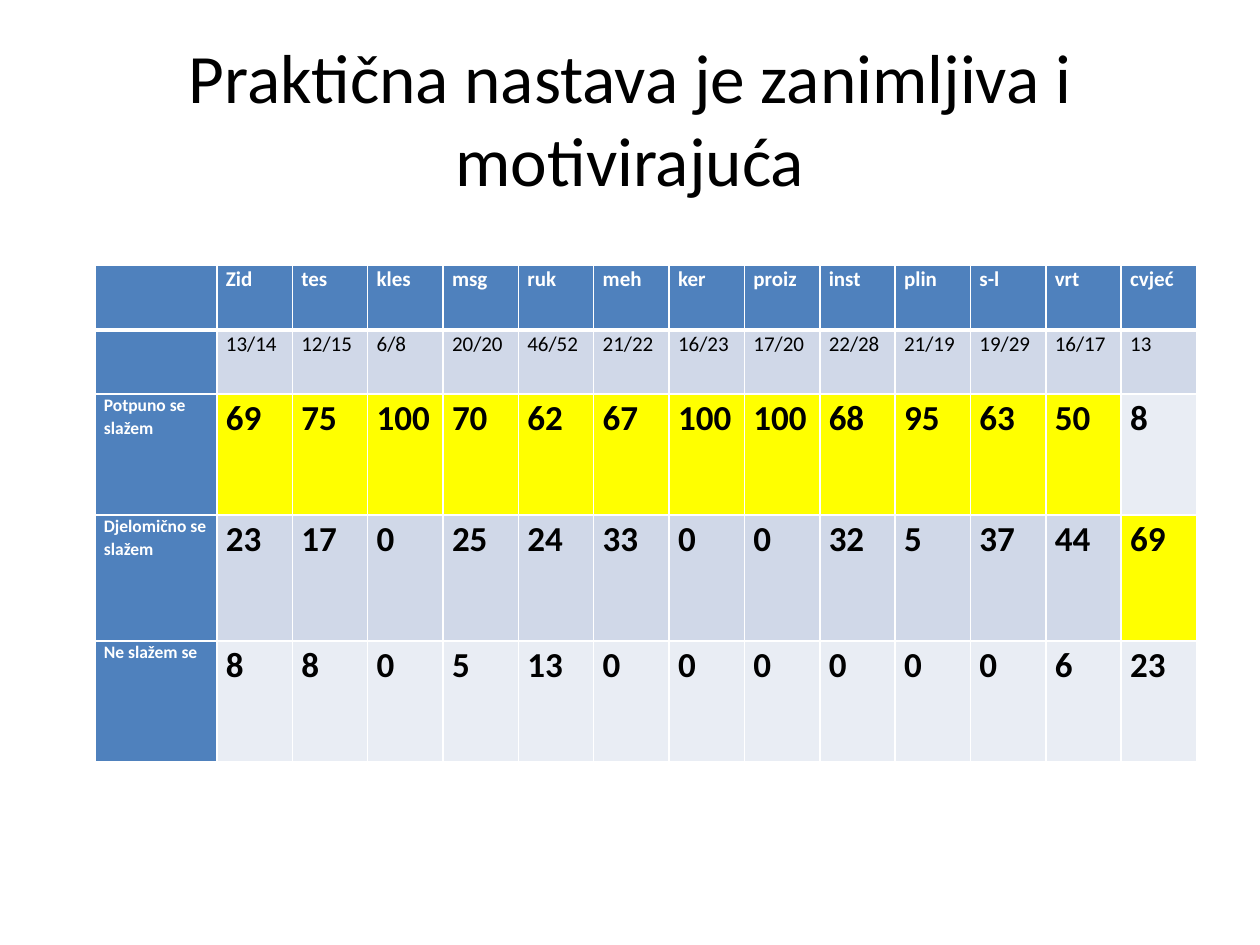
from lxml import etree
from pptx import Presentation
from pptx.dml.color import RGBColor
from pptx.enum.text import MSO_ANCHOR, PP_ALIGN
from pptx.oxml.ns import qn
from pptx.util import Pt

PX = 914400 // 126
CENTER = PP_ALIGN.CENTER
MIDDLE = MSO_ANCHOR.MIDDLE
FONT = "Calibri"
BLUE, YELLOW, WHITE, BLACK = "4F81BD", "FFFF00", "FFFFFF", "000000"
BANDS = ("E9EDF4", "D0D8E8")
LABEL_WIDTH = 122
ROW_HEIGHTS = (65, 64, 121, 126, 121)

TITLE = "Praktična nastava je zanimljiva i motivirajuća"
TRADES = ["", "Zid", "tes", "kles", "msg", "ruk", "meh", "ker", "proiz",
          "inst", "plin", "s-l", "vrt", "cvjeć"]
RESPONDENTS = ["", "13/14", "12/15", "6/8", "20/20", "46/52", "21/22", "16/23",
               "17/20", "22/28", "21/19", "19/29", "16/17", "13"]
ANSWERS = {
    "Potpuno se slažem": [69, 75, 100, 70, 62, 67, 100, 100, 68, 95, 63, 50, 8],
    "Djelomično se slažem": [23, 17, 0, 25, 24, 33, 0, 0, 32, 5, 37, 44, 69],
    "Ne slažem se": [8, 8, 0, 5, 13, 0, 0, 0, 0, 0, 0, 6, 23],
}


def color(value):
    return RGBColor.from_string(value)


def style_text(paragraph, size, ink, bold=False):
    for run in paragraph.runs:
        run.font.name = FONT
        run.font.size = Pt(size)
        run.font.bold = bold
        run.font.color.rgb = color(ink)


def add_title(slide, left, top, width, height):
    title = slide.shapes.add_textbox(left * PX, top * PX, width * PX, height * PX)
    frame = title.text_frame
    frame.word_wrap = True
    frame.vertical_anchor = MIDDLE
    frame.text = TITLE
    frame.paragraphs[0].alignment = CENTER
    style_text(frame.paragraphs[0], 39.6, BLACK)


def set_borders(cell, **points):
    properties = cell._tc.get_or_add_tcPr()
    for side in ("L", "R", "T", "B"):
        width = Pt(points.get(side, 1))
        line = etree.SubElement(properties, qn(f"a:ln{side}"), w=str(width))
        paint = etree.SubElement(line, qn("a:solidFill"))
        etree.SubElement(paint, qn("a:srgbClr"), val=WHITE)


def fill_cell(cell, text, size, ink, bold, background):
    cell.fill.solid()
    cell.fill.fore_color.rgb = color(background)
    cell.margin_left = cell.margin_right = 9 * PX
    cell.margin_top = cell.margin_bottom = 0
    cell.text = text
    paragraph = cell.text_frame.paragraphs[0]
    paragraph.line_spacing = 1.07
    style_text(paragraph, size, ink, bold)


def add_survey_table(slide, left, top, width, height):
    rows = [TRADES, RESPONDENTS]
    rows += [[answer, *shares] for answer, shares in ANSWERS.items()]
    highest = [max(shares) for shares in zip(*ANSWERS.values())]
    table = slide.shapes.add_table(len(rows), len(TRADES), left * PX, top * PX,
                                   width * PX, height * PX).table
    trade_width = (width - LABEL_WIDTH) * PX // len(highest)
    for index, column in enumerate(table.columns):
        column.width = trade_width if index else LABEL_WIDTH * PX
    for row, row_height in zip(table.rows, ROW_HEIGHTS):
        row.height = row_height * PX

    for r, values in enumerate(rows):
        for c, value in enumerate(values):
            cell = table.cell(r, c)
            set_borders(cell, T=3 if r == 1 else 1, B=3 if r == 0 else 1)
            if r == 0:
                look = (12, WHITE, True, BLUE)
            elif c == 0:
                look = (10, WHITE, True, BLUE)
            elif r == 1:
                look = (12, BLACK, False, BANDS[1])
            else:
                band = YELLOW if value == highest[c - 1] else BANDS[r % 2]
                look = (20, BLACK, True, band)
            fill_cell(cell, str(value), *look)


def main():
    presentation = Presentation()
    presentation.slide_width = 1260 * PX
    presentation.slide_height = 945 * PX
    slide = presentation.slides.add_slide(presentation.slide_layouts[6])
    add_title(slide, 63, 38, 1134, 158)
    add_survey_table(slide, 95, 265, 1102, sum(ROW_HEIGHTS))
    presentation.save("out.pptx")


if __name__ == "__main__":
    main()
